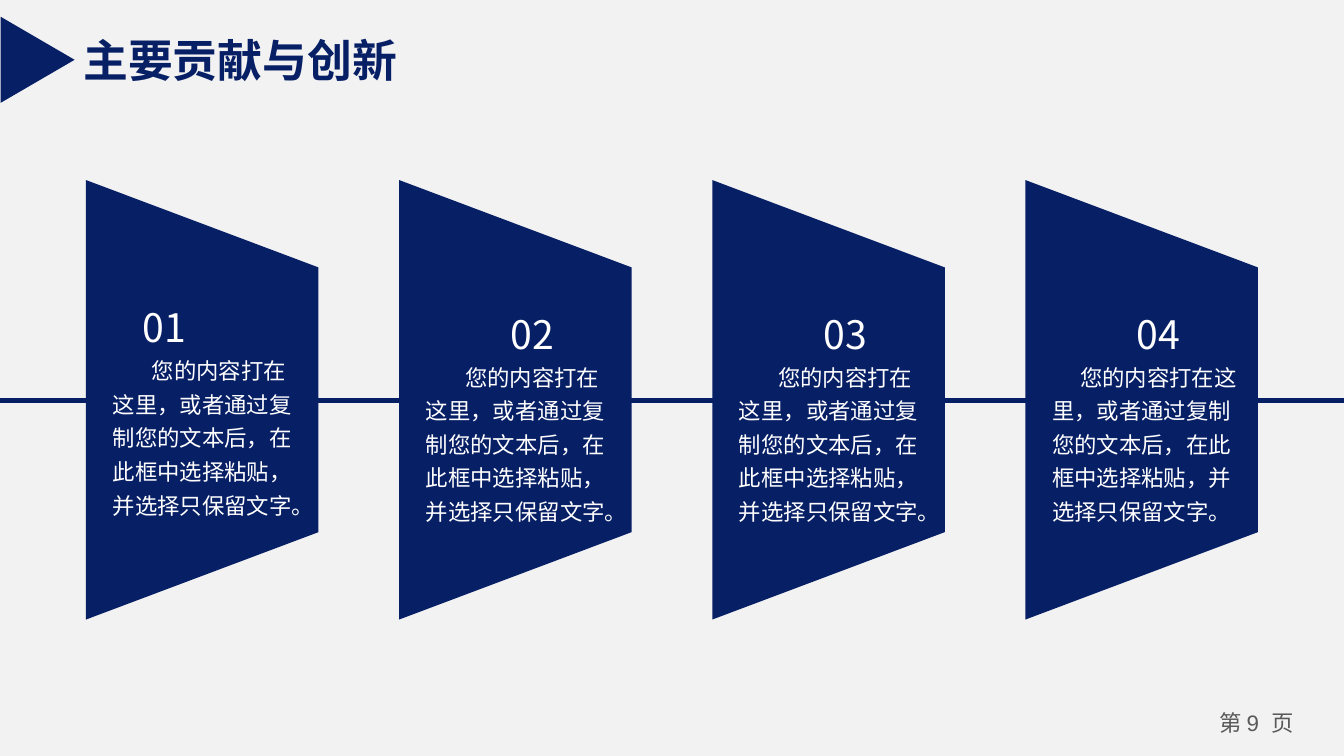
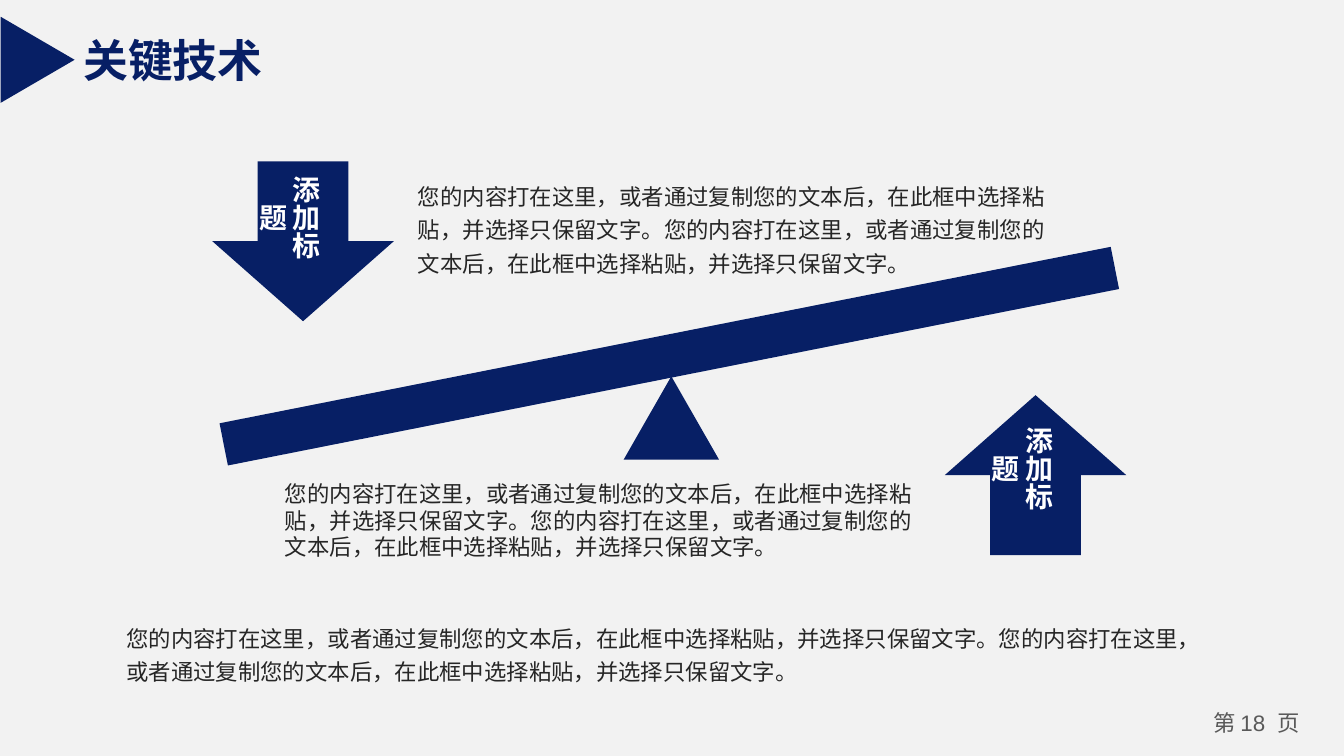
"""Build two slides: contributions on a timeline, and key techniques on a seesaw."""
from dataclasses import dataclass
from typing import Any, NamedTuple

from pptx import Presentation
from pptx.dml.color import RGBColor
from pptx.enum.shapes import MSO_CONNECTOR as Connector, MSO_SHAPE as Preset
from pptx.enum.text import MSO_ANCHOR as Anchor, MSO_AUTO_SIZE as Fit, PP_ALIGN as Align
from pptx.oxml.ns import qn
from pptx.util import Inches, Pt

COLORS = {"navy": "071F65", "paper": "F2F2F2", "ink": "262626", "grey": "595959", "white": "FFFFFF"}
CJK = "Noto Sans CJK SC"
LATIN = "Arial"
SENTENCE = "您的内容打在这里，或者通过复制您的文本后，在此框中选择粘贴，并选择只保留文字。"
SLIDE_WIDTH = 10
SLIDE_HEIGHT = SLIDE_WIDTH * 9 / 16
TIGHT = (0.07, 0.04)
ROOMY = (0.1, 0.05)
LABEL_BOTTOM_INSET = 0.25

PANEL_LEFT, PANEL_PITCH, PANEL_WIDTH = 0.64, 2.33, 1.73
PANEL_TOP, PANEL_BOTTOM, PANEL_SLANT = 1.34, 4.61, 0.65
PANEL_TEXT_MIDDLE = 3.07


class Box(NamedTuple):
    """Place of an element in inches."""
    left: float
    top: float
    width: float
    height: float

    def lengths(self) -> list[int]:
        """Return the four sides as lengths."""
        return [Inches(side) for side in self]


@dataclass
class Style:
    """Look of a run of text."""
    size: float
    color: str
    face: str = CJK
    bold: bool = False


@dataclass
class Panel:
    """One numbered panel of the timeline."""
    number: str
    text_width: float
    text_height: float = 1.8
    number_format: tuple = (Align.CENTER, 1.25)


@dataclass
class Passage:
    """One passage of body text."""
    box: Box
    line_spacing: float


@dataclass
class Weight:
    """One labelled arrow beside the seesaw."""
    arrow: Any
    box: Box
    label_box: Box


TITLE_STYLE = Style(24, "navy", LATIN, bold=True)
FOOTER_STYLE = Style(12, "grey")
PAGE_STYLE = Style(12, "grey", LATIN)
BODY_STYLE = Style(12, "ink")
NUMBER_STYLE = Style(21, "white")
PANEL_STYLE = Style(12, "white")
LABEL_STYLE = Style(15, "white", bold=True)

PANELS = [
    Panel("01", 1.58, 1.72, (Align.LEFT, 1.0)),
    Panel("02", 1.58),
    Panel("03", 1.61),
    Panel("04", 1.64),
]
PASSAGES = [
    Passage(Box(3.04, 1.27, 4.87, 0.83), 1.25),
    Passage(Box(2.05, 3.53, 4.96, 0.68), 1.0),
    Passage(Box(0.87, 4.56, 8.24, 0.58), 1.25),
]
WEIGHTS = [
    Weight(Preset.DOWN_ARROW, Box(1.58, 1.2, 1.35, 1.19), Box(2, 1.21, 0.45, 1.03)),
    Weight(Preset.UP_ARROW, Box(7.03, 2.94, 1.35, 1.19), Box(7.45, 3.08, 0.45, 1.03)),
]


def apply(target: Any, **formats: Any) -> None:
    """Set each format value on the target."""
    for key, value in formats.items():
        setattr(target, key, value)


def rgb(name: str) -> RGBColor:
    """Return a named colour."""
    return RGBColor.from_string(COLORS[name])


def paint(shape: Any, rotation: float = 0) -> None:
    """Give a shape the flat navy look."""
    shape.shadow.inherit = False
    shape.fill.solid()
    shape.fill.fore_color.rgb = rgb("navy")
    shape.line.fill.background()
    shape.rotation = rotation


def add_preset(shapes: Any, preset: Any, box: Box, rotation: float = 0) -> None:
    """Draw a navy preset shape."""
    paint(shapes.add_shape(preset, *box.lengths()), rotation)


def add_run(paragraph: Any, text: str, style: Style) -> None:
    """Append styled text to a paragraph."""
    run = paragraph.add_run()
    run.text = text
    apply(run.font, size=Pt(style.size), bold=style.bold, name=style.face)
    run.font.color.rgb = rgb(style.color)
    east_asian = run.font._element.makeelement(qn("a:ea"), {"typeface": CJK})
    run.font._element.find(qn("a:latin")).addnext(east_asian)


def format_frame(frame: Any, inset: tuple, wrap: bool = True, fit: Any = Fit.SHAPE_TO_FIT_TEXT) -> None:
    """Set insets, wrapping and fit of a text frame."""
    across, down = (Inches(side) for side in inset)
    apply(frame, margin_left=across, margin_right=across, margin_top=down, margin_bottom=down,
          word_wrap=wrap, auto_size=fit, vertical_anchor=Anchor.TOP)


def add_frame(shapes: Any, box: Box, inset: tuple, fit: Any = Fit.SHAPE_TO_FIT_TEXT) -> Any:
    """Add a text box and return its frame."""
    frame = shapes.add_textbox(*box.lengths()).text_frame
    format_frame(frame, inset, fit=fit)
    return frame


def add_page(deck: Any, heading: str, page: int) -> Any:
    """Add a slide with its title, marker and page number."""
    slide = deck.slides.add_slide(deck.slide_layouts[5])
    title = slide.shapes.title
    title_box = Box(0.52, 0.19, round(len(heading) / 3 + 0.22, 2), 0.5)
    for side, length in zip(("left", "top", "width", "height"), title_box.lengths()):
        setattr(title, side, length)
    format_frame(title.text_frame, ROOMY, wrap=False)
    paragraph = title.text_frame.paragraphs[0]
    paragraph.alignment = Align.LEFT
    add_run(paragraph, heading, TITLE_STYLE)
    add_preset(slide.shapes, Preset.ISOSCELES_TRIANGLE, Box(-0.04, 0.17, 0.64, 0.55), 90)

    footer = add_frame(slide.shapes, Box(8.9, 5.24, 0.9, 0.3), TIGHT, Fit.NONE).paragraphs[0]
    footer.alignment = Align.CENTER
    for text, style in (("第 ", FOOTER_STYLE), (f"{page}  ", PAGE_STYLE), ("页", FOOTER_STYLE)):
        add_run(footer, text, style)
    return slide


def add_panel(slide: Any, panel: Panel, left: float) -> None:
    """Draw a slanted panel with its number and text."""
    shapes = slide.shapes.add_group_shape().shapes
    right = left + PANEL_WIDTH
    corners = [(left, PANEL_TOP), (right, PANEL_TOP + PANEL_SLANT),
               (right, PANEL_BOTTOM - PANEL_SLANT), (left, PANEL_BOTTOM)]
    start, *others = [(Inches(x), Inches(y)) for x, y in corners]
    outline = shapes.build_freeform(*start)
    outline.add_line_segments(others, close=True)
    paint(outline.convert_to_shape())

    box = Box(left + (PANEL_WIDTH - panel.text_width) / 2, PANEL_TEXT_MIDDLE - panel.text_height / 2,
              panel.text_width, panel.text_height)
    frame = add_frame(shapes, box, ROOMY)
    number, body = frame.paragraphs[0], frame.add_paragraph()
    rows = ((number, panel.number, NUMBER_STYLE, panel.number_format),
            (body, SENTENCE, PANEL_STYLE, (Align.CENTER, 1.25)))
    for paragraph, text, style, (alignment, spacing) in rows:
        apply(paragraph, alignment=alignment, line_spacing=spacing)
        paragraph._p.get_or_add_pPr().set("indent", str(Inches(0.25)))
        add_run(paragraph, text, style)


def add_weight(slide: Any, weight: Weight) -> None:
    """Draw an arrow with its vertical label."""
    shapes = slide.shapes.add_group_shape().shapes
    add_preset(shapes, weight.arrow, weight.box)
    frame = add_frame(shapes, weight.label_box, ROOMY)
    frame.margin_bottom = Inches(LABEL_BOTTOM_INSET)
    frame._txBody.bodyPr.set("vert", "eaVert")
    frame.paragraphs[0].alignment = Align.CENTER
    add_run(frame.paragraphs[0], "添加标题", LABEL_STYLE)


def build_contributions(deck: Any) -> None:
    """Build the timeline of four panels."""
    slide = add_page(deck, "主要贡献与创新", 9)
    height = Inches(2.98)
    timeline = slide.shapes.add_connector(Connector.STRAIGHT, 0, height, Inches(SLIDE_WIDTH), height)
    timeline.line.color.rgb = rgb("navy")
    timeline.line.width = Pt(3)
    properties = timeline._element.spPr
    properties.append(properties.makeelement(qn("a:effectLst"), {}))
    for index, panel in enumerate(PANELS):
        add_panel(slide, panel, PANEL_LEFT + index * PANEL_PITCH)


def build_techniques(deck: Any) -> None:
    """Build the seesaw with its arrows and passages."""
    slide = add_page(deck, "关键技术", 18)
    for passage in PASSAGES:
        paragraph = add_frame(slide.shapes, passage.box, TIGHT).paragraphs[0]
        apply(paragraph, alignment=Align.LEFT, line_spacing=passage.line_spacing)
        add_run(paragraph, SENTENCE * 2, BODY_STYLE)
    add_preset(slide.shapes, Preset.RECTANGLE, Box(1.6, 2.49, 6.76, 0.32), -11.2)
    add_preset(slide.shapes, Preset.ISOSCELES_TRIANGLE, Box(4.64, 2.8, 0.71, 0.62))
    for weight in WEIGHTS:
        add_weight(slide, weight)


def main() -> None:
    """Build and save the presentation."""
    deck = Presentation()
    apply(deck, slide_width=Inches(SLIDE_WIDTH), slide_height=Inches(SLIDE_HEIGHT))
    background = deck.slide_master.background.fill
    background.solid()
    background.fore_color.rgb = rgb("paper")
    build_contributions(deck)
    build_techniques(deck)
    deck.save("out.pptx")


if __name__ == "__main__":
    main()
